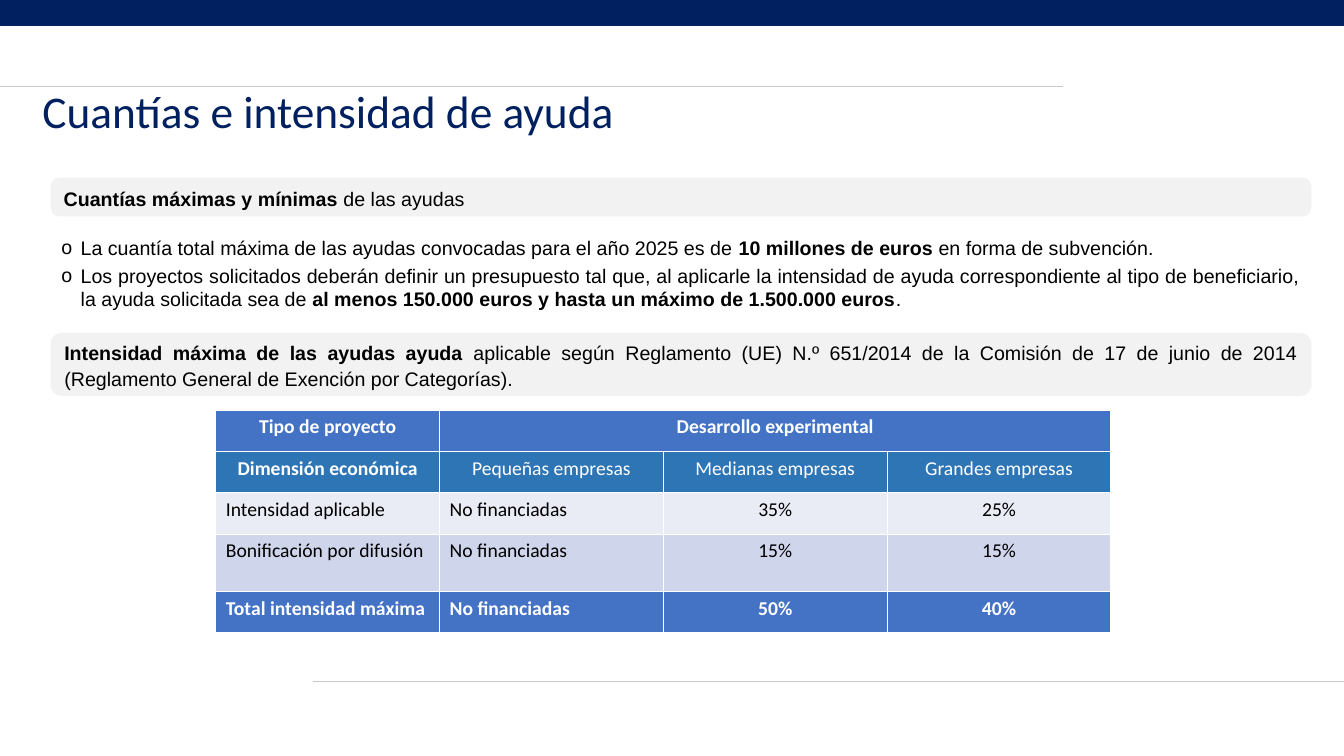
"""Builds the slide on grant amounts and aid intensity."""
import lxml.etree
import pptx
import pptx.util
import pptx.dml.color
import pptx.enum.shapes
import pptx.enum.text
import pptx.oxml.ns

Inches, Pt = pptx.util.Inches, pptx.util.Pt
RGBColor = pptx.dml.color.RGBColor
PP_ALIGN = pptx.enum.text.PP_ALIGN
MSO_SHAPE = pptx.enum.shapes.MSO_SHAPE
MIDDLE = pptx.enum.text.MSO_ANCHOR.MIDDLE

NAVY = RGBColor(0x00, 0x20, 0x60)
RULE_GRAY = RGBColor(0xC8, 0xC8, 0xC8)
PALE_GRAY = RGBColor(0xF2, 0xF2, 0xF2)
BLUE = RGBColor(0x44, 0x72, 0xC4)
TEAL_BLUE = RGBColor(0x2E, 0x75, 0xB6)
LIGHT_BAND = RGBColor(0xE9, 0xEB, 0xF5)
DARK_BAND = RGBColor(0xCF, 0xD5, 0xEA)
WHITE = RGBColor(0xFF, 0xFF, 0xFF)
BLACK = RGBColor(0x00, 0x00, 0x00)


def add_run(p, text, size, font, color, bold=False):
    r = p.add_run()
    r.text = text
    r.font.size = Pt(size)
    r.font.name = font
    r.font.color.rgb = color
    r.font.bold = bold


def add_panel(s, kind, left, top, width, height, color):
    sp = s.shapes.add_shape(kind, Inches(left), Inches(top), Inches(width), Inches(height))
    sp.shadow.inherit = False
    sp.fill.solid()
    sp.fill.fore_color.rgb = color
    sp.line.color.rgb = color
    sp.line.width = Pt(1)
    return sp


prs = pptx.Presentation()
prs.slide_width, prs.slide_height = Inches(13.33), Inches(7.5)
s = prs.slides.add_slide(prs.slide_layouts[1])

add_panel(s, MSO_SHAPE.RECTANGLE, 0, 0, 13.33, 0.25, NAVY)
for x1, x2, y in [(3.1, 13.33, 6.76), (0, 10.54, 0.86)]:
    line = s.shapes.add_connector(pptx.enum.shapes.MSO_CONNECTOR.STRAIGHT,
                                  Inches(x1), Inches(y), Inches(x2), Inches(y))
    line.line.color.rgb = RULE_GRAY
    line.line.width = Pt(0.5)
    lxml.etree.SubElement(line._element.spPr, pptx.oxml.ns.qn("a:effectLst"))

title = s.shapes.title
title.left, title.top, title.width, title.height = map(Inches, (0.32, 0.9, 10.34, 0.45))
tf = title.text_frame
tf.auto_size = pptx.enum.text.MSO_AUTO_SIZE.NONE
tf.vertical_anchor = MIDDLE
p = tf.paragraphs[0]
p.alignment = PP_ALIGN.LEFT
p.line_spacing = 0.9
add_run(p, "Cuantías e intensidad de ayuda", 32.4, "Calibri", NAVY)

headings = [
    (1.77, 0.37, 0.215, "Cuantías máximas y mínimas ", "de las ayudas"),
    (3.31, 0.61, 0.167, "Intensidad máxima de las ayudas ayuda ",
     "aplicable según Reglamento (UE) N.º 651/2014 de la Comisión de 17 de junio de 2014 "
     "(Reglamento General de Exención por Categorías)."),
]
for top, height, corner, strong, rest in headings:
    sp = add_panel(s, MSO_SHAPE.ROUNDED_RECTANGLE, 0.51, top, 12.49, height, PALE_GRAY)
    sp.adjustments[0] = corner
    tf = sp.text_frame
    tf.word_wrap = True
    tf.vertical_anchor = MIDDLE
    p = tf.paragraphs[0]
    p.alignment = PP_ALIGN.JUSTIFY
    p.line_spacing = 1.1
    p.space_after = Pt(6)
    add_run(p, strong, 14, "Arial", BLACK, True)
    add_run(p, rest, 14, "Arial", BLACK)

body = s.placeholders[1]
body.left, body.top, body.width, body.height = map(Inches, (0.51, 2.34, 12.49, 0.74))
body.fill.solid()
body.fill.fore_color.rgb = WHITE
tf = body.text_frame
tf.auto_size = pptx.enum.text.MSO_AUTO_SIZE.NONE
tf.vertical_anchor = MIDDLE
bullets = [
    ("La cuantía total máxima de las ayudas convocadas para el año 2025 es de ",
     "10 millones de euros ", "en forma de subvención."),
    ("Los proyectos solicitados deberán definir un presupuesto tal que, al aplicarle la "
     "intensidad de ayuda correspondiente al tipo de beneficiario, la ayuda solicitada sea de ",
     "al menos 150.000 euros y hasta un máximo de 1.500.000 euros", "."),
]
for i, (before, strong, after) in enumerate(bullets):
    p = tf.add_paragraph() if i else tf.paragraphs[0]
    p.alignment = PP_ALIGN.JUSTIFY
    p.space_before = Pt(3)
    pPr = p._p.get_or_add_pPr()
    pPr.set("marL", str(Inches(0.19)))
    pPr.set("indent", str(-Inches(0.19)))
    for tag, key, value in [("a:buFont", "typeface", "Arial"), ("a:buChar", "char", "o")]:
        lxml.etree.SubElement(pPr, pptx.oxml.ns.qn(tag)).set(key, value)
    add_run(p, before, 14, "Arial", BLACK)
    add_run(p, strong, 14, "Arial", BLACK, True)
    add_run(p, after, 14, "Arial", BLACK)

rows = [
    (0.41, BLUE, WHITE, True, ["Tipo de proyecto", "Desarrollo experimental", "", ""]),
    (0.41, TEAL_BLUE, WHITE, False,
     ["Dimensión económica", "Pequeñas empresas", "Medianas empresas", "Grandes empresas"]),
    (0.41, LIGHT_BAND, BLACK, False, ["Intensidad aplicable", "No financiadas", "35%", "25%"]),
    (0.57, DARK_BAND, BLACK, False, ["Bonificación por difusión", "No financiadas", "15%", "15%"]),
    (0.41, BLUE, WHITE, True, ["Total intensidad máxima", "No financiadas", "50%", "40%"]),
]
table = s.shapes.add_table(len(rows), 4, Inches(2.14), Inches(4.07),
                           Inches(8.88), Inches(2.21)).table
for column in table.columns:
    column.width = Inches(2.22)
table.cell(0, 1).merge(table.cell(0, 3))
for i, (height, fill, color, bold, texts) in enumerate(rows):
    table.rows[i].height = Inches(height)
    for j, text in enumerate(texts):
        cell = table.cell(i, j)
        cell.fill.solid()
        cell.fill.fore_color.rgb = fill
        if text:
            p = cell.text_frame.paragraphs[0]
            p.alignment = PP_ALIGN.CENTER if i < 2 or j > 1 else PP_ALIGN.LEFT
            add_run(p, text, 14, "Calibri", color, bold or (i, j) == (1, 0))

prs.save("out.pptx")
